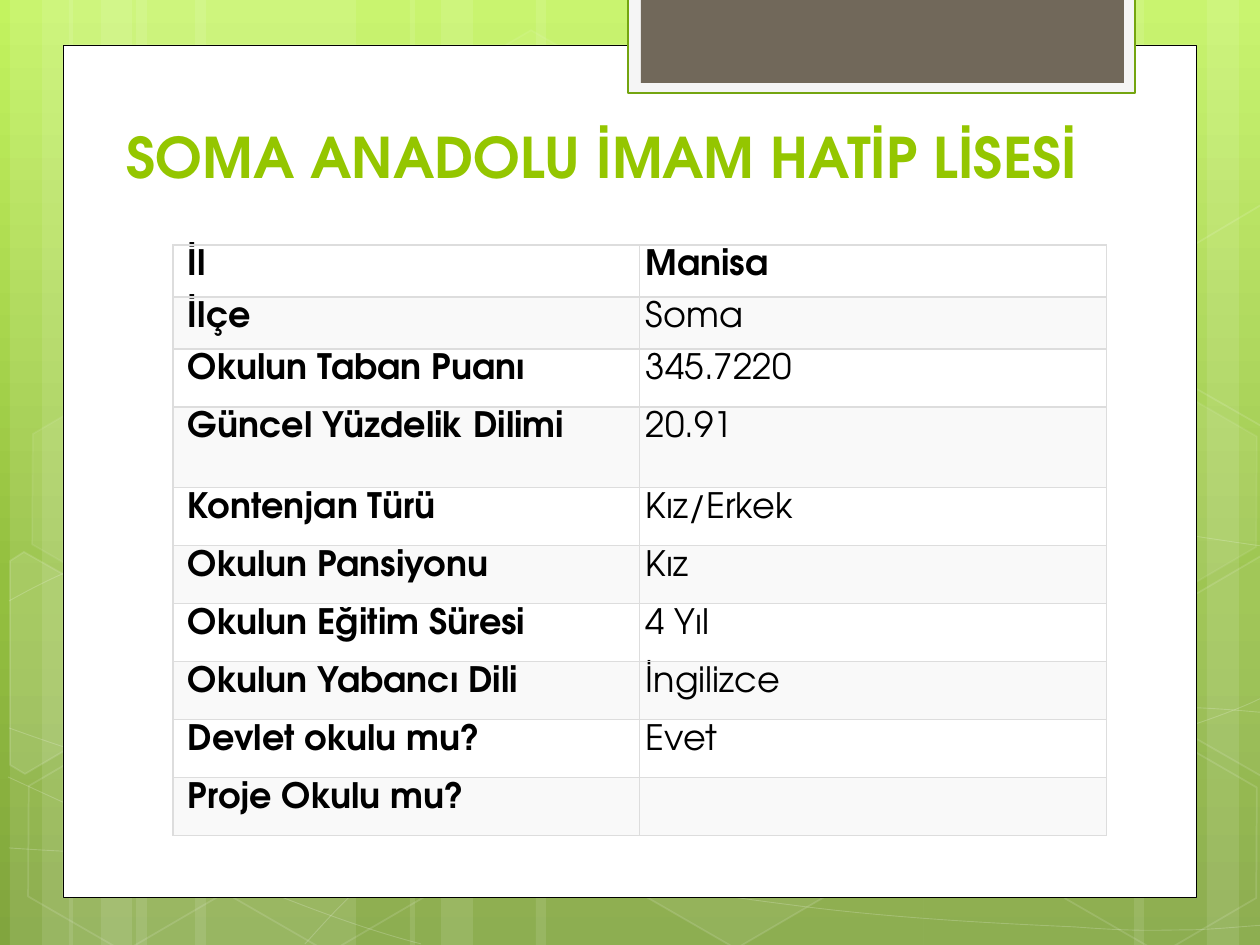
from copy import deepcopy
from dataclasses import dataclass

from lxml.etree import SubElement
from pptx import Presentation
from pptx.dml.color import RGBColor
from pptx.enum.shapes import MSO_SHAPE
from pptx.enum.text import MSO_ANCHOR
from pptx.oxml.ns import qn
from pptx.util import Emu, Pt

PX = 914400 // 126
WIDE, HIGH = 1260, 945
FONT = "TeX Gyre Adventor"
HUES = {
    "white": "FFFFFF", "black": "000000", "lime": "94C600", "green": "74A510",
    "pale": "F5F5F5", "brown": "71685A", "stripe": "F9F9F9", "rule": "DDDDDD",
}
SKY = [(0, "C3F35F"), (0.62, "93BF3F"), (1, "81A53E")]

Point = tuple[int, int]


@dataclass
class Paint:
    fill: str = ""
    line: str = ""
    width: float = 1
    solid: int = 100
    edge: int = 100


@dataclass
class Box:
    left: int
    top: int
    width: int
    height: int
    paint: Paint
    kind: MSO_SHAPE = MSO_SHAPE.RECTANGLE
    turn: int = 0


@dataclass
class Path:
    points: list[Point]
    paint: Paint
    curved: bool = False


@dataclass
class Row:
    label: str
    value: str
    height: int = 58
    bold: bool = False


def glass(fill: int, edge: int) -> Paint:
    return Paint("white" if fill else "", "white", 1, fill, edge)


def hexa(left: int, top: int, fill: int, edge: int) -> Box:
    return Box(left, top, 220, 192, glass(fill, edge), MSO_SHAPE.HEXAGON, 30)


HAZE = Paint("white", solid=10)
THREAD = Paint(line="white", width=0.5, edge=20)

BANDS = [Box(left, 0, width, HIGH, HAZE) for left, width in [
    (136, 220), (10, 63), (42, 105), (195, 220), (69, 63), (101, 105),
    (924, 220), (1207, 63), (1134, 105), (536, 388), (410, 63), (441, 105),
]]

CURVES = [
    [(9, 848), (68, 852), (145, 856), (239, 854), (334, 853), (451, 851), (577, 838),
     (703, 825), (882, 801), (998, 777), (1113, 753), (1231, 716), (1269, 694)],
    [(9, 601), (45, 581), (82, 562), (152, 543), (224, 524), (326, 496), (437, 488),
     (549, 479), (685, 478), (824, 488), (963, 498), (1193, 537), (1269, 547)],
    [(8, 777), (160, 847), (311, 916), (421, 944)],
    [(9, 728), (48, 742), (88, 756), (161, 776), (234, 795), (344, 827), (450, 848),
     (554, 869), (687, 892), (791, 905), (896, 919), (1008, 924), (1075, 927),
     (1140, 932), (1158, 930), (1191, 930), (1223, 929), (1246, 926), (1269, 925)],
    [(305, 944), (328, 919), (350, 893), (381, 871), (411, 848), (454, 823), (489, 805),
     (524, 788), (546, 779), (592, 767), (638, 754), (722, 737), (766, 728),
     (811, 719), (818, 719), (857, 717), (896, 714), (958, 709), (1000, 708),
     (1045, 707), (1116, 708), (1116, 708), (1144, 708), (1173, 708), (1201, 708),
     (1223, 709), (1245, 711), (1256, 712), (1268, 713), (1264, 712), (1268, 713)],
]

TILES = [
    hexa(421, 45, 4, 8), hexa(626, 742, 6, 12),
    Path([(10, 561), (24, 552), (121, 607), (120, 718), (25, 774), (10, 765)],
         glass(10, 12)),
    hexa(14, 745, 0, 12), hexa(18, 393, 7, 8), hexa(219, 746, 0, 12),
    hexa(949, 571, 10, 12), hexa(1051, 747, 0, 12), hexa(1051, 396, 7, 8),
    Path([(1167, 611), (1261, 556), (1271, 562), (1271, 772), (1263, 777), (1167, 722)],
         glass(4, 12)),
    Path([(1167, 261), (1261, 205), (1273, 212), (1271, 422), (1263, 427), (1167, 372)],
         glass(0, 12)),
]

PANELS = [
    Box(63, 45, 1134, 853, Paint("white", "black", 0.5)),
    Box(628, -3, 507, 96, Paint("pale", "green", 1.25)),
    Box(641, -3, 483, 86, Paint("brown")),
]

ROWS = [
    Row("İl", "Manisa", 43, True),
    Row("İlçe", "Soma", 43),
    Row("Okulun Taban Puanı", "345.7220"),
    Row("Güncel Yüzdelik Dilimi", "20.91", 81),
    Row("Kontenjan Türü", "Kız/Erkek"),
    Row("Okulun Pansiyonu", "Kız"),
    Row("Okulun Eğitim Süresi", "4 Yıl"),
    Row("Okulun Yabancı Dili", "İngilizce"),
    Row("Devlet okulu mu?", "Evet"),
    Row("Proje Okulu mu?", ""),
]


def px(size: int) -> Emu:
    return Emu(size * PX)


def tint(fill, hue: str, solid: int = 100) -> None:
    fill.solid()
    fill.fore_color.rgb = RGBColor.from_string(HUES[hue])
    if solid < 100:
        for node in fill._xPr.iter(qn("a:srgbClr")):
            if node.getparent().getparent() is fill._xPr:
                SubElement(node, qn("a:alpha"), val=str(solid * 1000))


def coat(shape, paint: Paint) -> None:
    shape.shadow.inherit = False
    if paint.fill:
        tint(shape.fill, paint.fill, paint.solid)
    else:
        shape.fill.background()
    if paint.line:
        shape.line.width = Pt(paint.width)
        tint(shape.line.fill, paint.line, paint.edge)
    else:
        shape.line.fill.background()


def bend(shape) -> None:
    lines = shape.element.xpath(".//a:lnTo")
    for i in range(0, len(lines), 3):
        curve = SubElement(lines[i].getparent(), qn("a:cubicBezTo"))
        for line in lines[i:i + 3]:
            curve.append(line[0])
            line.getparent().remove(line)


def draw(slide, item: Box | Path) -> None:
    if isinstance(item, Box):
        spot = map(px, (item.left, item.top, item.width, item.height))
        shape = slide.shapes.add_shape(item.kind, *spot)
        shape.rotation = item.turn
        if item.kind == MSO_SHAPE.HEXAGON:
            shape.adjustments[0] = 0.285
    else:
        pen = slide.shapes.build_freeform(*item.points[0], scale=PX)
        pen.add_line_segments(item.points[1:], close=not item.curved)
        shape = pen.convert_to_shape()
        if item.curved:
            bend(shape)
    coat(shape, item.paint)


def style(font, size: int, hue: str, bold: bool) -> None:
    font.name, font.size, font.bold = FONT, Pt(size), bold
    font.color.rgb = RGBColor.from_string(HUES[hue])


def rule(cell) -> None:
    for side in ("lnL", "lnR", "lnT", "lnB"):
        line = SubElement(cell._tc.get_or_add_tcPr(), qn(f"a:{side}"), w=str(Pt(0.75)))
        fill = SubElement(line, qn("a:solidFill"))
        SubElement(fill, qn("a:srgbClr"), val=HUES["rule"])


def grid(slide) -> None:
    total = sum(row.height for row in ROWS)
    table = slide.shapes.add_table(len(ROWS), 2, px(173), px(245), px(934), px(total)).table
    table.first_row = table.horz_banding = False
    for i, row in enumerate(ROWS):
        table.rows[i].height = px(row.height)
        for j, (text, bold) in enumerate([(row.label, True), (row.value, row.bold)]):
            cell = table.cell(i, j)
            rule(cell)
            tint(cell.fill, "stripe" if i % 2 else "white")
            cell.margin_left = px(6 if j else 15)
            cell.margin_right = cell.margin_top = cell.margin_bottom = px(5)
            if text:
                run = cell.text_frame.paragraphs[0].add_run()
                run.text = text
                style(run.font, 20, "black", bold)


def title(slide) -> None:
    frame = slide.shapes.add_textbox(px(114), px(45), px(1083), px(151)).text_frame
    frame.word_wrap = True
    frame.vertical_anchor = MSO_ANCHOR.BOTTOM
    part = frame.paragraphs[0]
    part.text = "SOMA ANADOLU İMAM HATİP LİSESİ"
    style(part.font, 32, "lime", True)


def shade(slide) -> None:
    fill = slide.background.fill
    fill.gradient()
    fill.gradient_angle = 270
    first = slide.element.xpath(".//a:gs")[0]
    first.addnext(deepcopy(first))
    for stop, (place, hue) in zip(fill.gradient_stops, SKY):
        stop.position = place
        stop.color.rgb = RGBColor.from_string(hue)


def main() -> None:
    deck = Presentation()
    deck.slide_width, deck.slide_height = px(WIDE), px(HIGH)
    slide = deck.slides.add_slide(deck.slide_layouts[6])
    shade(slide)
    threads = [Path(knots, THREAD, True) for knots in CURVES]
    for item in BANDS + threads + TILES + PANELS:
        draw(slide, item)
    title(slide)
    grid(slide)
    deck.save("out.pptx")


if __name__ == "__main__":
    main()
